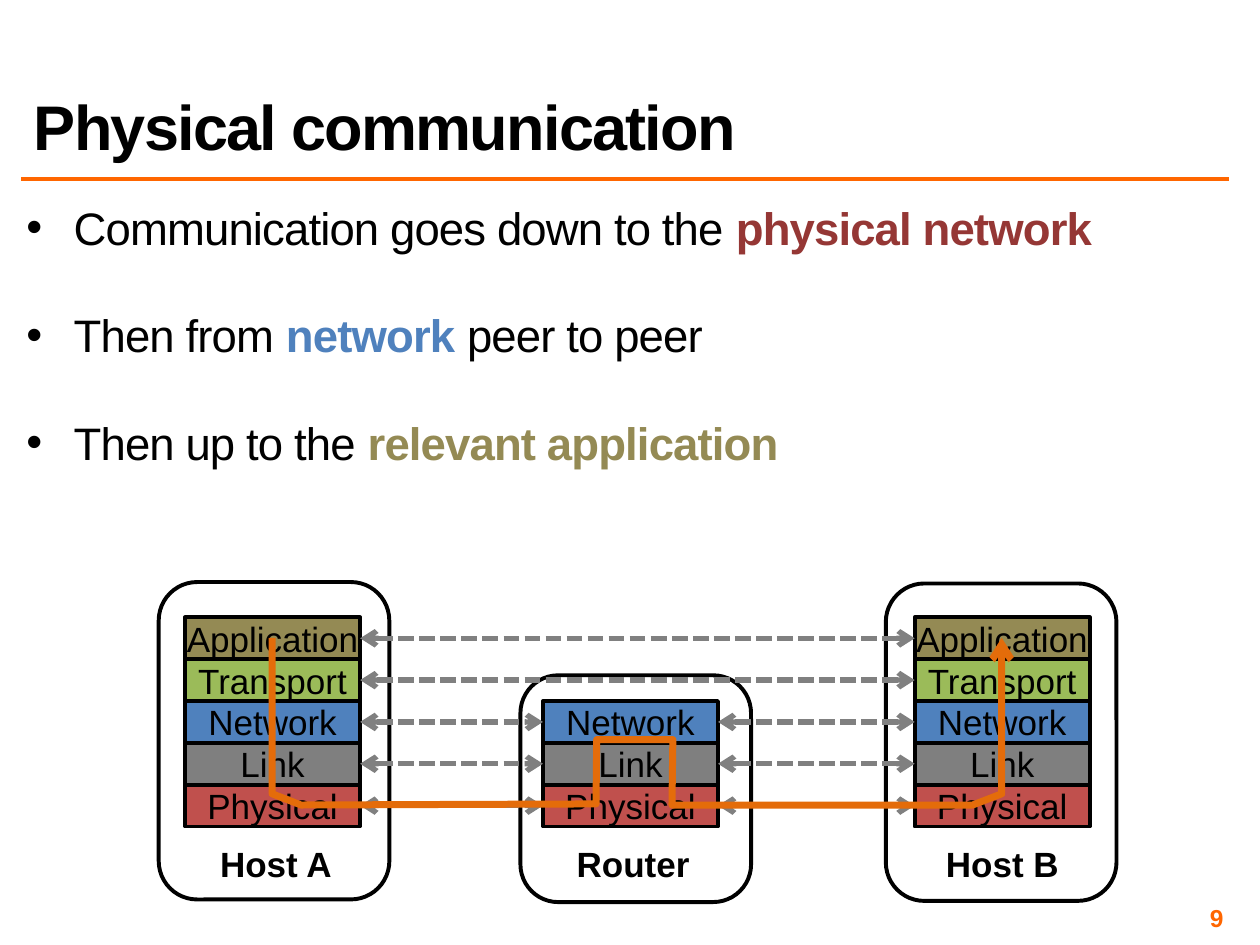
from dataclasses import dataclass
from itertools import pairwise

from pptx import Presentation
from pptx.dml.color import RGBColor
from pptx.enum.dml import MSO_LINE
from pptx.enum.shapes import MSO_CONNECTOR, MSO_SHAPE
from pptx.enum.text import MSO_ANCHOR as Anchor
from pptx.enum.text import MSO_AUTO_SIZE as AutoSize
from pptx.enum.text import PP_ALIGN as Align
from pptx.oxml.ns import qn
from pptx.util import Pt


@dataclass(frozen=True)
class Theme:
    font: str = "Arial"
    black: str = "000000"
    accent: str = "FF6600"
    route: str = "E46C0A"
    peer_link: str = "808080"
    red: str = "953735"
    blue: str = "4F81BD"
    olive: str = "948A54"
    green: str = "9BBB59"
    gray: str = "7F7F7F"
    brick: str = "C0504D"
    title_size: int = 36
    body_size: int = 26
    diagram_size: int = 20
    number_size: int = 14
    outline: float = 2.25


@dataclass(frozen=True)
class Layer:
    name: str
    color: str


@dataclass(frozen=True)
class Node:
    name: str
    stack_left: float
    label_center: float
    frame: tuple[float, float, float, float]
    first_layer: int = 0


@dataclass(frozen=True)
class Bullet:
    lead: str
    key: str
    key_color: str
    rest: str = ""


THEME = Theme()
LAYERS = [
    Layer("Application", THEME.olive),
    Layer("Transport", THEME.green),
    Layer("Network", THEME.blue),
    Layer("Link", THEME.gray),
    Layer("Physical", THEME.brick),
]
NODES = [
    Node("Host A", 105.8, 157.7, (90.7, 332.6, 131.8, 181.4)),
    Node("Router", 310.3, 361.8, (297.4, 385.9, 131.8, 129.6), first_layer=2),
    Node("Host B", 522.7, 572.8, (506.2, 333.4, 131.8, 181.4)),
]
BULLETS = [
    Bullet("Communication goes down to the ", "physical network", THEME.red),
    Bullet("Then from ", "network ", THEME.blue, "peer to peer"),
    Bullet("Then up to the ", "relevant application", THEME.olive),
]
ROUTE = [
    (155.5, 364.5), (155.5, 453.6), (172, 460), (340.6, 459.4), (341, 422.6),
    (384.5, 422.6), (384, 460), (555.8, 460), (572.4, 453.6), (572.4, 364.5),
]
STACK_TOP, LAYER_WIDTH, LAYER_HEIGHT = 352.8, 100, 23.9
LABEL_TOP, LABEL_WIDTH, LABEL_HEIGHT = 478, 80, 31.5


def rgb(color: str) -> RGBColor:
    return RGBColor.from_string(color)


def place(shape, left: float, top: float, width: float, height: float) -> None:
    shape.left, shape.top = Pt(left), Pt(top)
    shape.width, shape.height = Pt(width), Pt(height)


def set_font(font, size: float, color: str = THEME.black, bold: bool = False) -> None:
    font.name, font.size, font.bold = THEME.font, Pt(size), bold
    font.color.rgb = rgb(color)


def set_margins(frame, margin: float) -> None:
    frame.margin_left = frame.margin_right = Pt(margin)
    frame.margin_top = frame.margin_bottom = Pt(margin)


def add_run(paragraph, text: str, tracking: float):
    """Add a run whose letter spacing is given in points."""
    run = paragraph.add_run()
    run.text = text
    run.font._element.set("spc", str(round(tracking * 100)))
    return run


def set_line(line, color: str, width: float) -> None:
    line.color.rgb = rgb(color)
    line.width = Pt(width)


def add_arrowheads(line, *ends: str) -> None:
    """Put open arrows on the given ends, headEnd before tailEnd."""
    element = line._get_or_add_ln()
    for end in ends:
        element.append(element.makeelement(qn(f"a:{end}"), {"type": "arrow"}))


def add_line(slide, start: tuple[float, float], end: tuple[float, float],
             color: str, width: float):
    connector = slide.shapes.add_connector(
        MSO_CONNECTOR.STRAIGHT, *(Pt(value) for value in (*start, *end)))
    set_line(connector.line, color, width)
    properties = connector._element.spPr
    properties.append(properties.makeelement(qn("a:effectLst"), {}))
    return connector


def add_label(slide, text: str, box: tuple[float, float, float, float],
              align: Align, size: float, color: str = THEME.black):
    shape = slide.shapes.add_textbox(*(Pt(value) for value in box))
    paragraph = shape.text_frame.paragraphs[0]
    paragraph.text, paragraph.alignment = text, align
    set_font(paragraph.font, size, color, bold=True)
    return shape.text_frame


def fill_title(title) -> None:
    place(title, 12.2, 12.2, 689.8, 84.2)
    frame = title.text_frame
    frame.auto_size, frame.vertical_anchor = AutoSize.NONE, Anchor.BOTTOM
    paragraph = frame.paragraphs[0]
    paragraph.alignment, paragraph.line_spacing = Align.LEFT, 0.8
    set_font(paragraph.font, THEME.title_size, bold=True)
    add_run(paragraph, "Physical communication", -1)


def fill_body(body) -> None:
    place(body, 12.2, 117.4, 688.3, 181.4)
    frame = body.text_frame
    frame.auto_size = AutoSize.NONE
    set_margins(frame, 2.9)
    for index, bullet in enumerate(BULLETS):
        paragraph = frame.add_paragraph() if index else frame.paragraphs[0]
        paragraph.line_spacing = 0.8
        paragraph.space_before = Pt(36.5 if index else 6)
        properties = paragraph._p.get_or_add_pPr()
        properties.set("marL", str(Pt(27)))
        properties.set("indent", str(-Pt(27)))
        set_font(paragraph.font, THEME.body_size)
        add_run(paragraph, bullet.lead, -0.5)
        key = add_run(paragraph, bullet.key, -0.5)
        key.font.bold, key.font.color.rgb = True, rgb(bullet.key_color)
        if bullet.rest:
            add_run(paragraph, bullet.rest, -0.5)


def add_outlined(slide, kind: MSO_SHAPE, box: tuple[float, float, float, float]):
    shape = slide.shapes.add_shape(kind, *(Pt(value) for value in box))
    shape.shadow.inherit = False
    set_line(shape.line, THEME.black, THEME.outline)
    return shape


def add_layer(slide, layer: Layer, left: float, top: float):
    shape = add_outlined(slide, MSO_SHAPE.RECTANGLE, (left, top, LAYER_WIDTH, LAYER_HEIGHT))
    shape.fill.solid()
    shape.fill.fore_color.rgb = rgb(layer.color)
    frame = shape.text_frame
    frame.word_wrap, frame.vertical_anchor = False, Anchor.MIDDLE
    paragraph = frame.paragraphs[0]
    paragraph.text, paragraph.alignment = layer.name, Align.CENTER
    set_font(paragraph.font, THEME.diagram_size)
    return shape


def add_node(slide, node: Node) -> dict:
    """Draw one machine and return its layer boxes by layer name."""
    boxes = {}
    for row, layer in enumerate(LAYERS):
        if row >= node.first_layer:
            boxes[layer.name] = add_layer(
                slide, layer, node.stack_left, STACK_TOP + row * LAYER_HEIGHT)
    label_box = (node.label_center - LABEL_WIDTH / 2, LABEL_TOP, LABEL_WIDTH, LABEL_HEIGHT)
    add_label(slide, node.name, label_box, Align.CENTER, THEME.diagram_size).word_wrap = False
    add_outlined(slide, MSO_SHAPE.ROUNDED_RECTANGLE, node.frame).fill.background()
    return boxes


def add_peer_links(slide, stacks: list[dict]) -> None:
    """Join each layer to the same layer of the next machine that has it."""
    for layer in LAYERS:
        peers = [stack[layer.name] for stack in stacks if layer.name in stack]
        for left, right in pairwise(peers):
            link = add_line(slide, (0, 0), (0, 0), THEME.peer_link, 3)
            link.begin_connect(left, 3)
            link.end_connect(right, 1)
            link.line.dash_style = MSO_LINE.SQUARE_DOT
            add_arrowheads(link.line, "headEnd", "tailEnd")


def add_route(slide) -> None:
    start, *others = [(Pt(x), Pt(y)) for x, y in ROUTE]
    builder = slide.shapes.build_freeform(*start)
    builder.add_line_segments(others, close=False)
    route = builder.convert_to_shape()
    route.shadow.inherit = False
    route.fill.background()
    set_line(route.line, THEME.route, 4)
    add_arrowheads(route.line, "tailEnd")


def main() -> None:
    presentation = Presentation()
    presentation.slide_width, presentation.slide_height = Pt(720), Pt(540)
    slide = presentation.slides.add_slide(presentation.slide_layouts[1])
    add_line(slide, (12.2, 102.2), (702, 102.2), THEME.accent, 2)
    fill_title(slide.shapes.title)
    fill_body(slide.placeholders[1])
    add_peer_links(slide, [add_node(slide, node) for node in NODES])
    add_route(slide)
    number = add_label(slide, "9", (534.2, 516.2, 167.8, 16.6), Align.RIGHT,
                       THEME.number_size, THEME.accent)
    number.word_wrap, number.vertical_anchor = True, Anchor.MIDDLE
    set_margins(number, 2.9)
    presentation.save("out.pptx")


if __name__ == "__main__":
    main()
